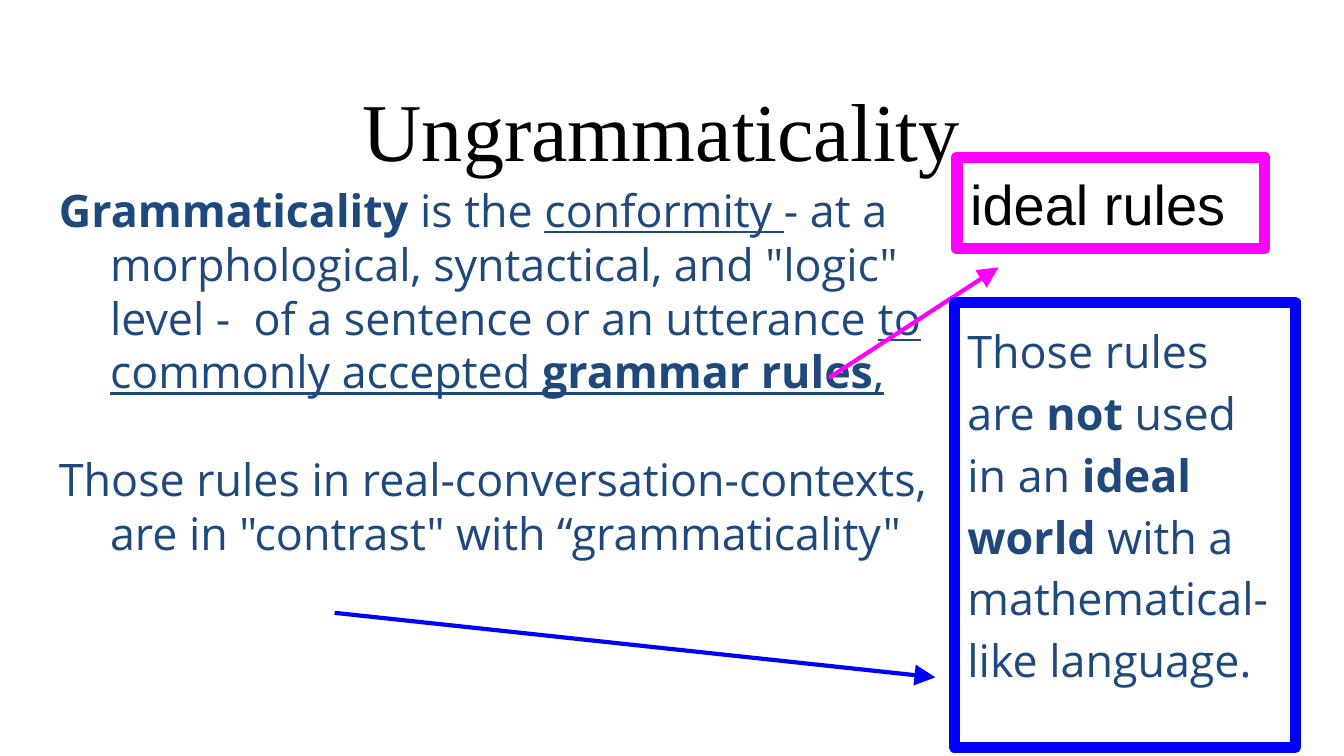
from lxml import etree
from pptx import Presentation
from pptx.dml.color import RGBColor
from pptx.enum.shapes import MSO_CONNECTOR, MSO_SHAPE
from pptx.enum.text import MSO_ANCHOR, MSO_AUTO_SIZE, PP_ALIGN
from pptx.oxml.ns import qn
from pptx.util import Inches, Pt

RECT = MSO_SHAPE.RECTANGLE
STRAIGHT = MSO_CONNECTOR.STRAIGHT
TOP, MIDDLE = MSO_ANCHOR.TOP, MSO_ANCHOR.MIDDLE
LEFT, CENTER = PP_ALIGN.LEFT, PP_ALIGN.CENTER
NO_FIT = MSO_AUTO_SIZE.NONE

BLACK = RGBColor(0x00, 0x00, 0x00)
NAVY = RGBColor(0x1F, 0x49, 0x7D)
PINK = RGBColor(0xFF, 0x00, 0xFF)
BLUE = RGBColor(0x00, 0x00, 0xFF)

# Each paragraph is a list of (text, marks): b is bold, u is underlined
BODY = [
    [("Grammaticality", "b"), (" is the ", ""), ("conformity ", "u"),
     ('- at a morphological, syntactical, and "logic" level -  of a sentence or an utterance ', ""),
     ("to commonly accepted ", "u"), ("grammar rules", "bu"), (",", "u")],
    [('Those rules in real-conversation-contexts, are in "contrast" with “grammaticality"', "")],
]
IDEAL = [[("ideal rules", "")]]
WORLD = [
    [("Those rules are ", ""), ("not", "b"), (" used in an ", ""),
     ("ideal world ", "b"), ("with a mathematical-", "")],
    [("like language.", "")],
]


def set_frame(frame, anchor):
    frame.word_wrap = True
    frame.auto_size = NO_FIT
    frame.vertical_anchor = anchor
    frame.margin_left = frame.margin_right = Inches(0.1)
    frame.margin_top = frame.margin_bottom = Inches(0.1)


def style(font, name, size, color):
    font.name, font.size = name, Pt(size)
    font.color.rgb = color


def write(frame, paras, name, size, color, space=1.0):
    for i, parts in enumerate(paras):
        para = frame.paragraphs[0] if i == 0 else frame.add_paragraph()
        para.alignment = LEFT
        para.line_spacing = space
        for text, marks in parts:
            run = para.add_run()
            run.text = text
            style(run.font, name, size, color)
            run.font.bold = "b" in marks
            run.font.underline = "u" in marks


def add_title(slide, box):
    title = slide.shapes.title
    title.left, title.top, title.width, title.height = map(Inches, box)
    frame = title.text_frame
    frame.text = "Ungrammaticality "
    set_frame(frame, TOP)
    para = frame.paragraphs[0]
    para.alignment = CENTER
    style(para.runs[0].font, "Times New Roman", 44, BLACK)


def add_body(slide, box):
    frame = slide.shapes.add_textbox(*map(Inches, box)).text_frame
    set_frame(frame, TOP)
    write(frame, BODY, "Open Sans", 24, NAVY)
    for para in frame.paragraphs:
        props = para._p.get_or_add_pPr()
        props.set("marL", str(Inches(0.38)))
        props.set("indent", str(Inches(-0.38)))
    frame.paragraphs[1].space_before = Pt(28.8)


def add_note(slide, box, edge, anchor, *text):
    note = slide.shapes.add_shape(RECT, *map(Inches, box))
    note.shadow.inherit = False
    note.fill.background()
    note.line.color.rgb = edge
    note.line.width = Pt(6)
    set_frame(note.text_frame, anchor)
    write(note.text_frame, *text)


def add_arrow(slide, start, end, color):
    arrow = slide.shapes.add_connector(STRAIGHT, *map(Inches, start + end))
    arrow.line.color.rgb = color
    arrow.line.width = Pt(2.25)
    etree.SubElement(arrow.line._get_or_add_ln(), qn("a:tailEnd"),
                     type="triangle", w="lg", len="lg")
    etree.SubElement(arrow._element.spPr, qn("a:effectLst"))


def main():
    deck = Presentation()
    deck.slide_width, deck.slide_height = Inches(10), Inches(10) * 9 // 16
    slide = deck.slides.add_slide(deck.slide_layouts[5])

    # Title and definition
    add_title(slide, (0.34, 0.49, 9.32, 0.68))
    add_body(slide, (0.34, 1.26, 6.71, 3.74))

    # Framed notes, each with its arrow
    add_note(slide, (7.12, 1.17, 2.29, 0.68), PINK, MIDDLE, IDEAL, "Arial", 30, BLACK)
    add_arrow(slide, (6.17, 2.81), (7.43, 1.99), PINK)
    add_note(slide, (7.1, 2.25, 2.54, 3.31), BLUE, TOP, WORLD, "Open Sans", 24, NAVY, 1.15)
    add_arrow(slide, (2.49, 4.56), (6.96, 5.04), BLUE)

    deck.save("out.pptx")


if __name__ == "__main__":
    main()
